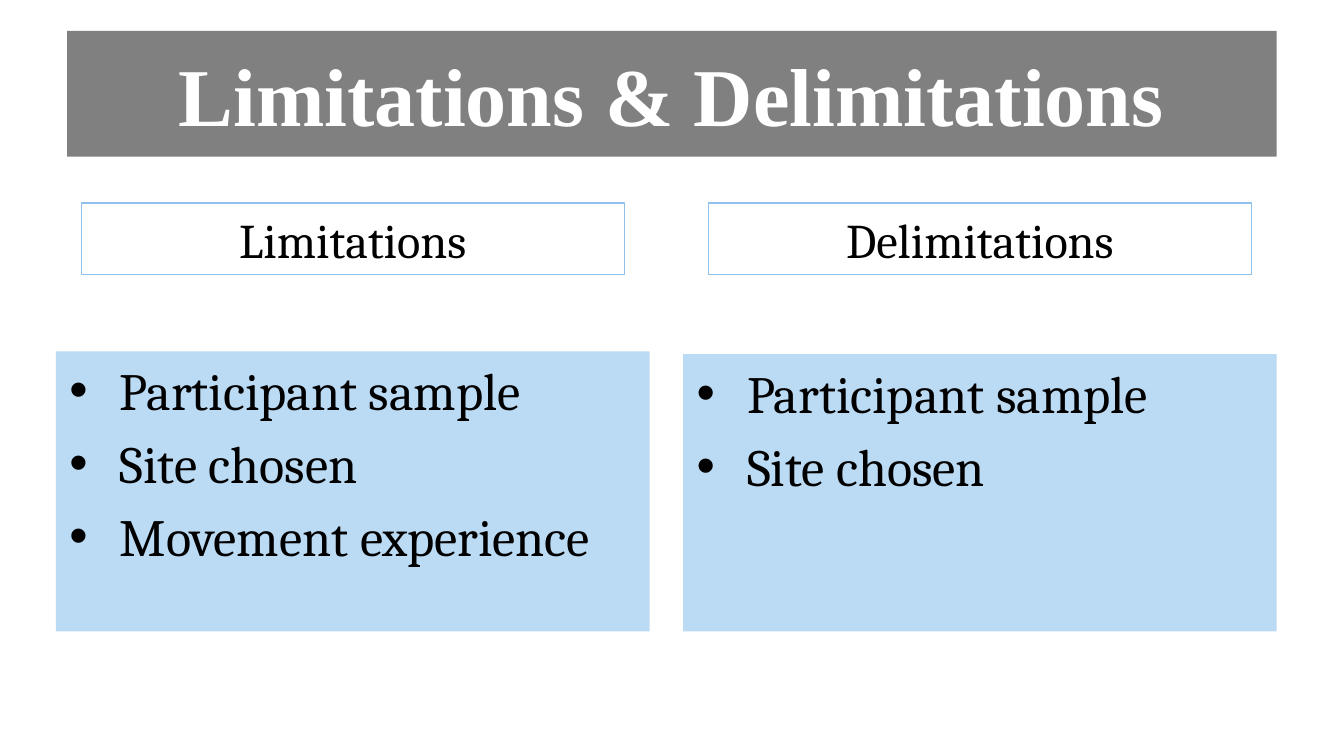
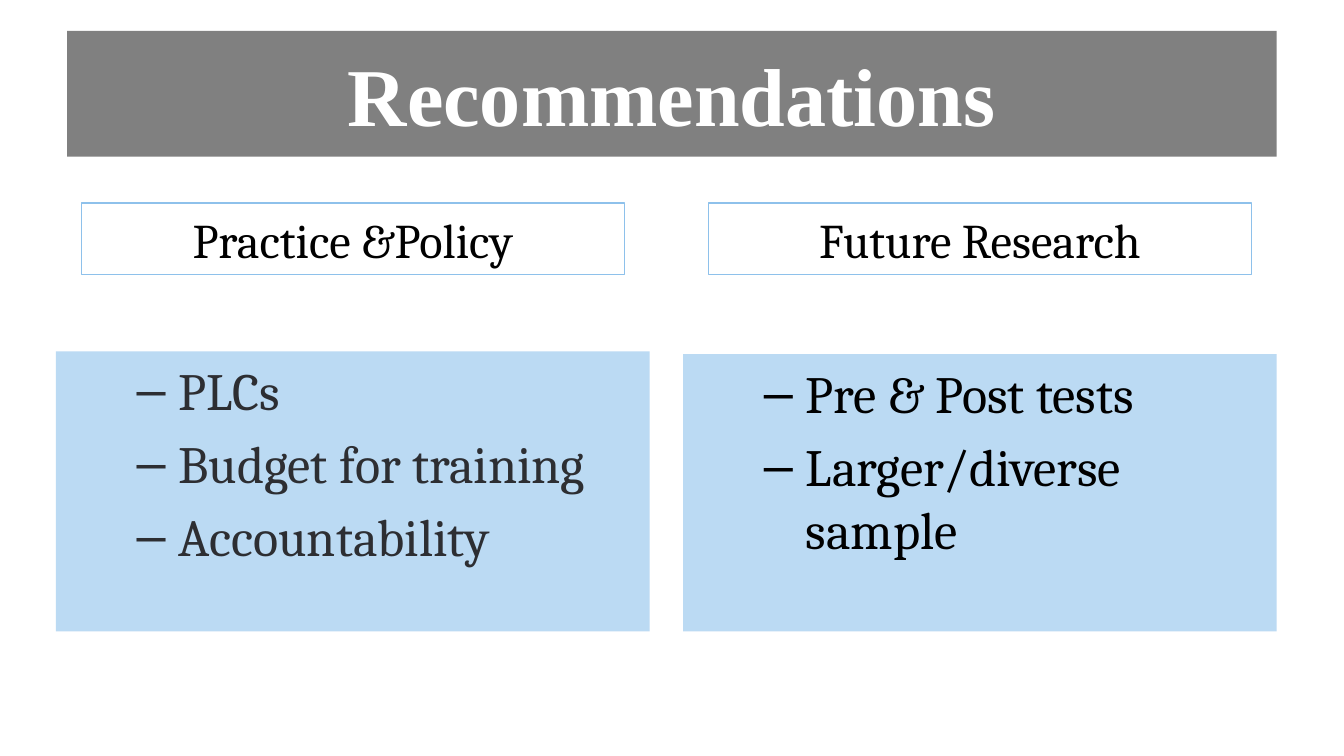
"""Build two comparison slides: limitations and recommendations."""
from lxml.etree import SubElement
from pptx import Presentation
from pptx.dml.color import RGBColor
from pptx.enum.text import MSO_ANCHOR as ANCHOR, MSO_AUTO_SIZE as AUTO, PP_ALIGN as ALIGN
from pptx.oxml.ns import qn
from pptx.util import Pt

PX = 9525
GREY, BLUE, EDGE = "808080", "BBDAF3", "8EC1EB"
WHITE, BLACK, DARK = "FFFFFF", "000000", "2D2E32"
COLUMN_STEP = 448
BODY_BOTTOM = 451

BULLETS = {0: ("•", 36, -36), 1: ("–", 78, -30)}

SLIDES = [
    ("Limitations & Delimitations", 0, [
        ("Limitations", BLACK, ["Participant sample", "Site chosen", "Movement experience"]),
        ("Delimitations", BLACK, ["Participant sample", "Site chosen"]),
    ]),
    ("Recommendations", 1, [
        ("Practice &Policy", DARK, ["PLCs", "Budget for training", "Accountability"]),
        ("Future Research", BLACK, ["Pre & Post tests", "Larger/diverse sample"]),
    ]),
]


def rgb(value):
    return RGBColor.from_string(value)


def fill_box(sp, box, fill, lines, font, size, color, bold=False, align=None, anchor=ANCHOR.TOP):
    sp.left, sp.top, sp.width, sp.height = [n * PX for n in box]
    sp.fill.solid()
    sp.fill.fore_color.rgb = rgb(fill)
    tf = sp.text_frame
    tf.text = "\n".join(lines)
    tf.word_wrap = True
    tf.auto_size = AUTO.NONE
    tf.vertical_anchor = anchor
    for i, p in enumerate(tf.paragraphs):
        p.alignment = align
        p.space_before = Pt(size * 0.2 if i else 0)
        for r in p.runs:
            r.font.name, r.font.size, r.font.bold = font, Pt(size), bold
            r.font.color.rgb = rgb(color)


prs = Presentation()
prs.slide_width, prs.slide_height = 960 * PX, 540 * PX

for title, level, columns in SLIDES:
    s = prs.slides.add_slide(prs.slide_layouts[4])
    s.background.fill.solid()
    s.background.fill.fore_color.rgb = rgb(WHITE)
    fill_box(s.shapes.title, (48, 22, 864, 90), GREY, [title], "Times New Roman", 44, WHITE,
             bold=True, align=ALIGN.CENTER, anchor=ANCHOR.MIDDLE)

    for col, (heading, color, items) in enumerate(columns):
        shift = col * COLUMN_STEP
        head, body = s.placeholders[1 + 2 * col], s.placeholders[2 + 2 * col]

        fill_box(head, (58 + shift, 145, 388, 51), WHITE, [heading], "Cambria", 25.9, BLACK,
                 align=ALIGN.CENTER)
        head.line.color.rgb = rgb(EDGE)
        head.line.width = Pt(0.75)

        top = 251 + 2 * col
        fill_box(body, (40 + shift, top, 424, BODY_BOTTOM - top), BLUE, items, "Cambria", 28, color)
        char, margin, indent = BULLETS[level]
        for p in body.text_frame.paragraphs:
            p.level = level
            pPr = p._p.get_or_add_pPr()
            pPr.set("marL", str(margin * PX))
            pPr.set("indent", str(indent * PX))
            SubElement(pPr, qn("a:buFont")).set("typeface", "Arial")
            SubElement(pPr, qn("a:buChar")).set("char", char)

prs.save("out.pptx")
